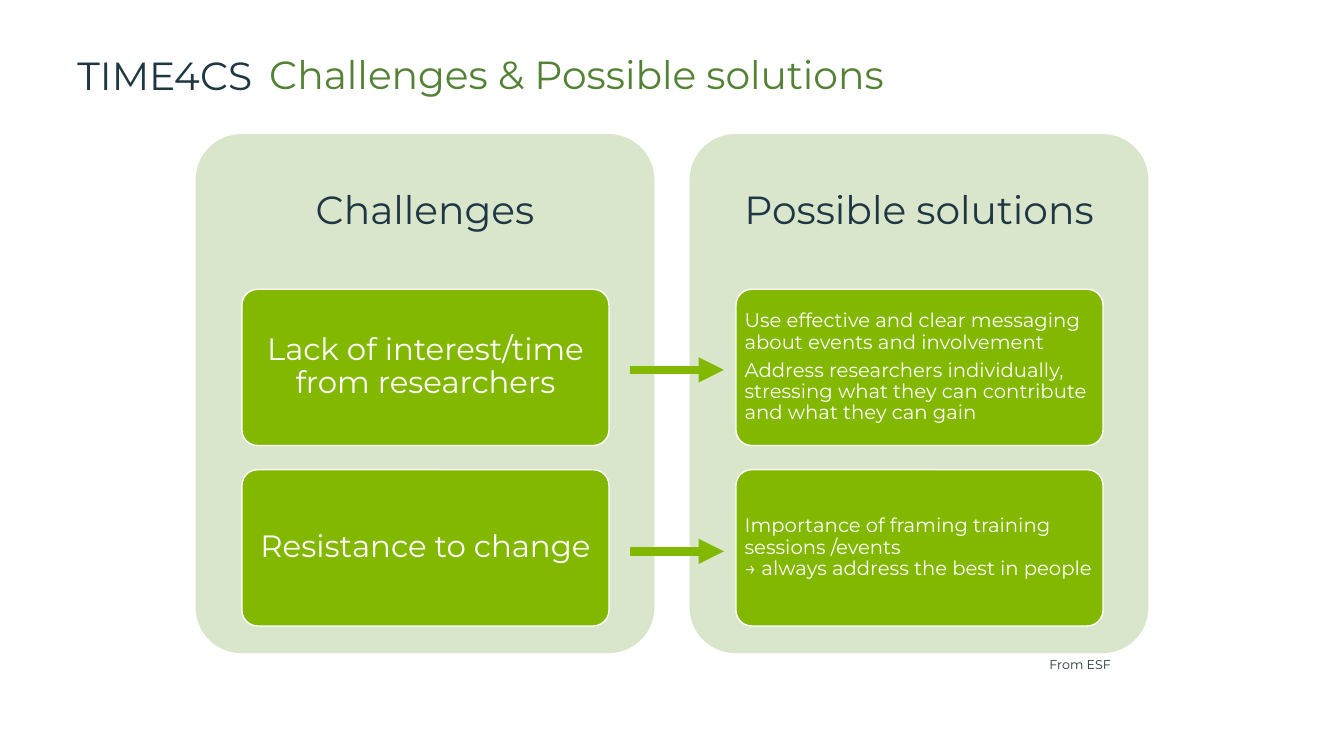
from lxml import etree
from pptx import Presentation
from pptx.dml.color import RGBColor
from pptx.enum.shapes import MSO_CONNECTOR, MSO_SHAPE
from pptx.enum.text import MSO_ANCHOR as ANCHOR, MSO_AUTO_SIZE, PP_ALIGN as ALIGN
from pptx.oxml.ns import qn
from pptx.util import Pt

PX = 9144
FONT = "Montserrat"
NAVY = RGBColor(0x1F, 0x36, 0x43)
DARK_GREEN = RGBColor(0x54, 0x82, 0x35)
GREEN = RGBColor(0x83, 0xB8, 0x01)
PALE = RGBColor(0xD9, 0xE6, 0xCC)
WHITE = RGBColor(0xFF, 0xFF, 0xFF)


def px(*values):
    return [v * PX for v in values]


def write(sp, paragraphs, size, color, align=ALIGN.LEFT, anchor=ANCHOR.TOP,
          inset=(10, 5), spacing=0.9, after=0):
    tf = sp.text_frame
    tf.word_wrap = True
    tf.auto_size = MSO_AUTO_SIZE.NONE
    tf.vertical_anchor = anchor
    tf.margin_left = tf.margin_right = inset[0] * PX
    tf.margin_top = tf.margin_bottom = inset[1] * PX
    for i, text in enumerate(paragraphs):
        p = tf.add_paragraph() if i else tf.paragraphs[0]
        p.text = text
        p.alignment = align
        p.line_spacing = spacing
        p.space_before = Pt(0)
        p.space_after = Pt(after)
        for r in p.runs:
            r.font.name = FONT
            r.font.size = Pt(size)
            r.font.color.rgb = color


prs = Presentation()
prs.slide_width, prs.slide_height = px(1333, 750)
s = prs.slides.add_slide(prs.slide_layouts[5])

title = s.shapes.title
title.left, title.top, title.width, title.height = px(257, 50, 1009, 46)
write(title, ["Challenges & Possible solutions"], 28, DARK_GREEN)

project = s.shapes.add_textbox(*px(67, 46, 203, 57))
write(project, ["TIME4CS"], 28, NAVY, spacing=1)

columns = [
    ("Challenges",
     [["Lack of interest/time from researchers"], ["Resistance to change"]],
     dict(size=22, align=ALIGN.CENTER, inset=(6, 5), after=7.7)),
    ("Possible solutions",
     [["Use effective and clear messaging about events and involvement",
       "Address researchers individually, stressing what they can contribute "
       "and what they can gain"],
      ["Importance of framing training sessions /events\v"
       "→ always address the best in people"]],
     dict(size=14, inset=(4, 3), after=4.9)),
]

for col, (heading, cards, style) in enumerate(columns):
    left = 194 + 490 * col
    panel = s.shapes.add_shape(MSO_SHAPE.ROUNDED_RECTANGLE, *px(left, 133, 455, 515))
    panel.adjustments[0] = 0.1
    panel.shadow.inherit = False
    panel.fill.solid()
    panel.fill.fore_color.rgb = PALE
    panel.line.fill.background()

    head = s.shapes.add_textbox(*px(left, 133, 455, 154))
    write(head, [heading], 28, NAVY, align=ALIGN.CENTER, anchor=ANCHOR.MIDDLE,
          inset=(12, 12), after=9.8)

    for row, paragraphs in enumerate(cards):
        card = s.shapes.add_shape(MSO_SHAPE.ROUNDED_RECTANGLE,
                                  *px(left + 46, 287 + 179 * row, 364, 155))
        card.adjustments[0] = 0.1
        card.shadow.inherit = False
        card.fill.solid()
        card.fill.fore_color.rgb = GREEN
        card.line.color.rgb = WHITE
        card.line.width = Pt(1)
        write(card, paragraphs, color=WHITE, anchor=ANCHOR.MIDDLE, **style)

for y in (367, 547):
    arrow = s.shapes.add_connector(MSO_CONNECTOR.STRAIGHT, *px(625, y, 718, y))
    arrow.line.color.rgb = GREEN
    arrow.line.width = Pt(6)
    etree.SubElement(arrow.line._get_or_add_ln(), qn("a:tailEnd"), type="triangle")
    etree.SubElement(arrow._element.spPr, qn("a:effectLst"))

credit = s.shapes.add_textbox(*px(1031, 647, 97, 25))
write(credit, ["From ESF"], 9, NAVY, spacing=1)

prs.save("out.pptx")
